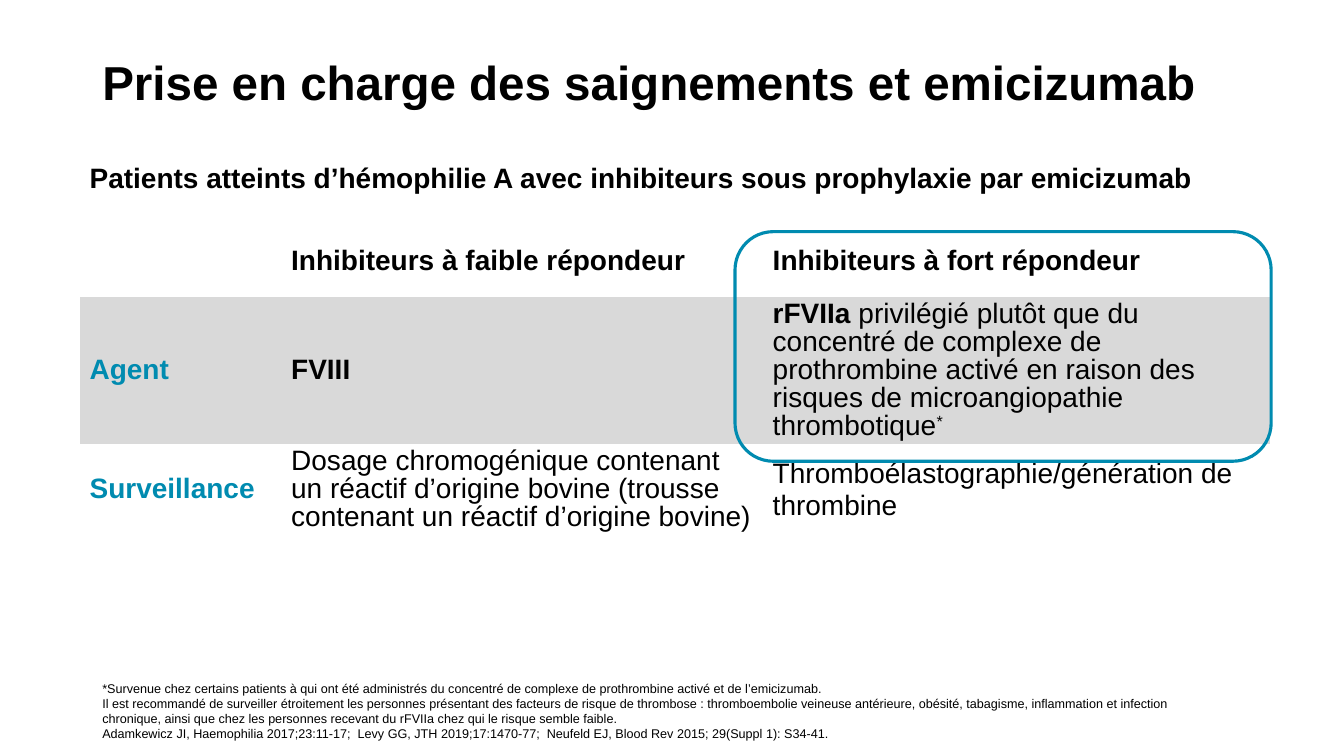
from pptx import Presentation
from pptx.dml.color import RGBColor
from pptx.enum.shapes import MSO_SHAPE
from pptx.enum.text import MSO_ANCHOR
from pptx.oxml.ns import qn
from pptx.util import Pt

COLORS = {"black": "000000", "teal": "008BB0", "band": "D9D9D9", "white": "FFFFFF"}
FONT = "Arial"
NO_STYLE = "{2D5ABB26-0587-4C30-8999-92F81FD0307C}"

SUBTITLE = "Patients atteints d’hémophilie A avec inhibiteurs sous prophylaxie par emicizumab"
COLUMN_WIDTHS = [144, 344, 362]
ROW_HEIGHTS = [61, 50.5, 105, 64]

# Each cell is a list of runs: text, bold, colour, superscript
ROWS = [
    [
        [],
        [("Inhibiteurs à faible répondeur", True, "black", False)],
        [("Inhibiteurs à fort répondeur", True, "black", False)],
    ],
    [
        [("Agent", True, "teal", False)],
        [("FVIII", True, "black", False)],
        [
            ("rFVIIa", True, "black", False),
            (" privilégié plutôt que du concentré de complexe de prothrombine activé "
             "en raison des risques de microangiopathie thrombotique", False, "black", False),
            ("*", False, "black", True),
        ],
    ],
    [
        [("Surveillance", True, "teal", False)],
        [("Dosage chromogénique contenant un réactif d’origine bovine "
          "(trousse contenant un réactif d’origine bovine)", False, "black", False)],
        [("Thromboélastographie/génération de thrombine", False, "black", False)],
    ],
]

FOOTNOTES = [
    "*Survenue chez certains patients à qui ont été administrés du concentré de complexe "
    "de prothrombine activé et de l’emicizumab.",
    "Il est recommandé de surveiller étroitement les personnes présentant des facteurs de "
    "risque de thrombose : thromboembolie veineuse antérieure, obésité, tabagisme, "
    "inflammation et infection chronique, ainsi que chez les personnes recevant du rFVIIa "
    "chez qui le risque semble faible.",
    "Adamkewicz JI, Haemophilia 2017;23:11-17;  Levy GG, JTH 2019;17:1470-77;  "
    "Neufeld EJ, Blood Rev 2015; 29(Suppl 1): S34-41.",
]


def rgb(name):
    return RGBColor.from_string(COLORS[name])


def add_run(paragraph, text, size, bold=False, color="black", superscript=False):
    run = paragraph.add_run()
    run.text = text
    run.font.name = FONT
    run.font.size = Pt(size)
    run.font.bold = bold
    run.font.color.rgb = rgb(color)
    if superscript:
        run.font._element.set("baseline", "30000")


def add_text(slide, box, lines, size, anchor, bold=False, spacing=1.0, bottom=3.6):
    frame = slide.shapes.add_textbox(*map(Pt, box)).text_frame
    frame.word_wrap = True
    frame.vertical_anchor = anchor
    frame.margin_bottom = Pt(bottom)
    for index, line in enumerate(lines):
        paragraph = frame.paragraphs[0] if index == 0 else frame.add_paragraph()
        paragraph.line_spacing = spacing
        add_run(paragraph, line, size, bold)


def fill_cell(cell, runs, fill, spacing=0.9, anchor=MSO_ANCHOR.MIDDLE, bottom=2.2):
    cell.fill.solid()
    cell.fill.fore_color.rgb = rgb(fill)
    cell.vertical_anchor = anchor
    cell.margin_left = cell.margin_right = Pt(6.5)
    cell.margin_top, cell.margin_bottom = Pt(2.2), Pt(bottom)
    paragraph = cell.text_frame.paragraphs[0]
    paragraph.line_spacing = spacing
    for text, bold, color, superscript in runs:
        add_run(paragraph, text, 20, bold, color, superscript)


def add_treatment_table(slide):
    frame = slide.shapes.add_table(
        len(ROW_HEIGHTS), len(COLUMN_WIDTHS), Pt(57.5), Pt(101),
        Pt(sum(COLUMN_WIDTHS)), Pt(sum(ROW_HEIGHTS)))
    table = frame.table
    table.first_row = table.horz_banding = False
    table._tbl.tblPr.find(qn("a:tableStyleId")).text = NO_STYLE
    for column, width in zip(table.columns, COLUMN_WIDTHS):
        column.width = Pt(width)
    for row, height in zip(table.rows, ROW_HEIGHTS):
        row.height = Pt(height)

    # Heading across all columns, raised above the column titles
    heading = table.cell(0, 0)
    heading.merge(table.cell(0, 2))
    fill_cell(heading, [(SUBTITLE, True, "black", False)], "white",
              anchor=MSO_ANCHOR.BOTTOM, bottom=23)

    for r, row in enumerate(ROWS, start=1):
        for c, runs in enumerate(row):
            last = (r, c) == (3, 2)
            fill_cell(table.cell(r, c), runs, "band" if r == 2 else "white",
                      spacing=1.0 if last else 0.9)


def add_highlight(slide, box):
    highlight = slide.shapes.add_shape(MSO_SHAPE.ROUNDED_RECTANGLE, *map(Pt, box))
    highlight.shadow.inherit = False
    highlight.fill.background()
    highlight.line.color.rgb = rgb("teal")
    highlight.line.width = Pt(2.25)


def main():
    deck = Presentation()
    deck.slide_width, deck.slide_height = Pt(960), Pt(540)
    slide = deck.slides.add_slide(deck.slide_layouts[6])

    add_treatment_table(slide)
    add_text(slide, (66, 500.5, 781, 29), FOOTNOTES, 9, MSO_ANCHOR.BOTTOM, bottom=0)
    add_text(slide, (66, 18, 828, 86), ["Prise en charge des saignements et emicizumab"],
             34, MSO_ANCHOR.MIDDLE, bold=True, spacing=0.9)
    add_highlight(slide, (525, 165.5, 383, 164))

    deck.save("out.pptx")


if __name__ == "__main__":
    main()
